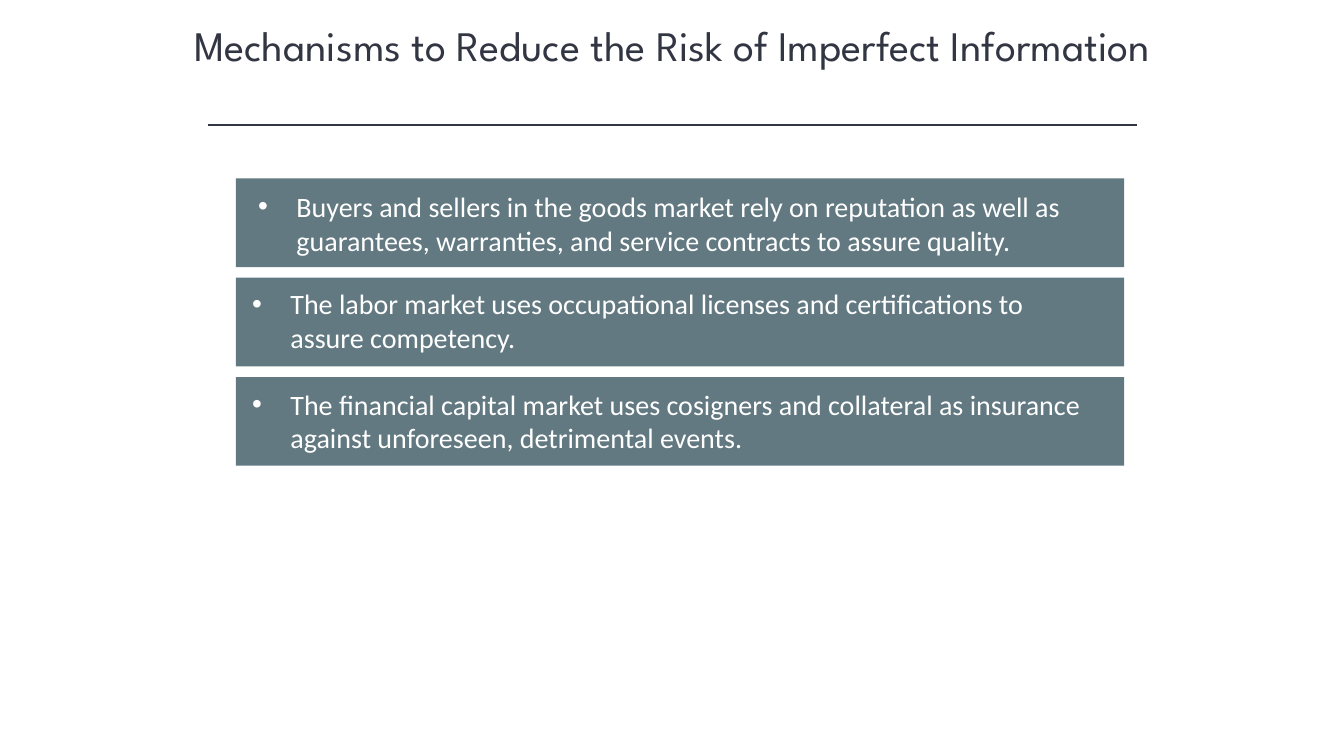
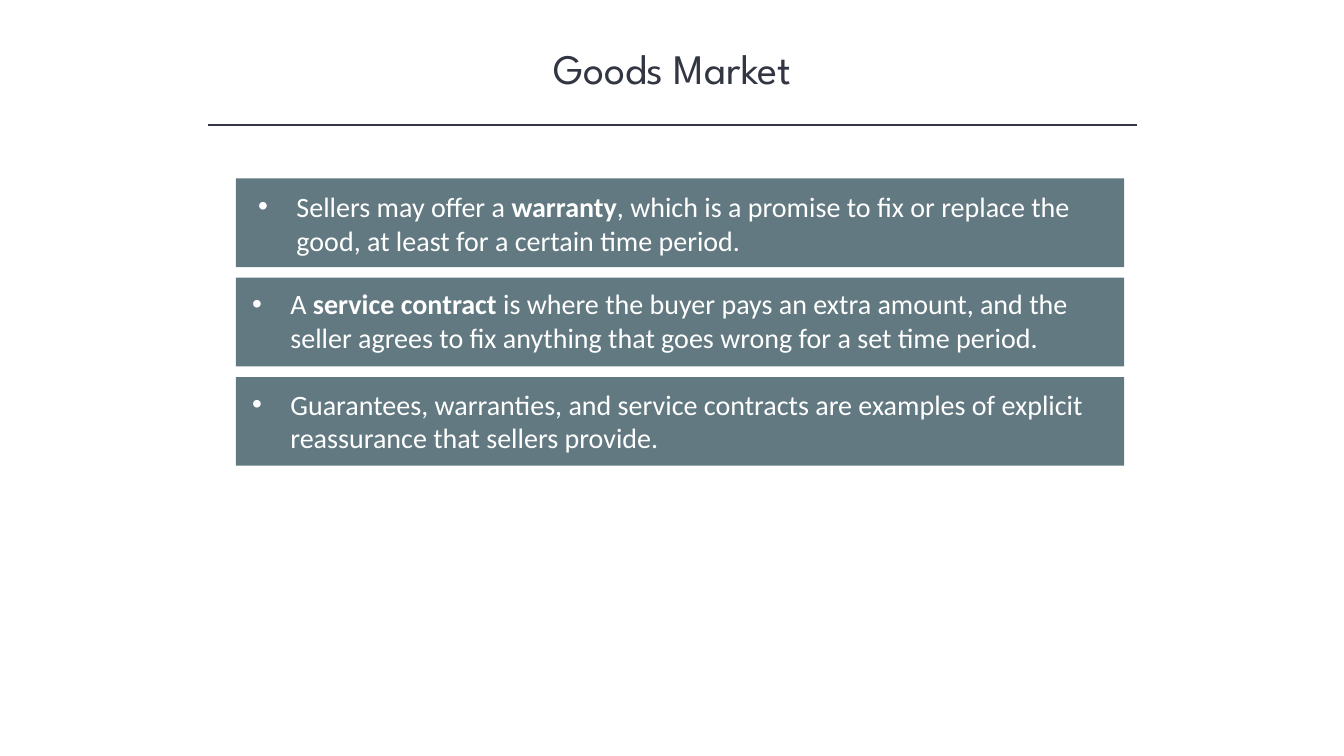
import collections

import pptx
import pptx.dml.color
import pptx.enum.shapes
import pptx.enum.text
import pptx.oxml
import pptx.util
from lxml import etree

Inches, Pt = pptx.util.Inches, pptx.util.Pt
RGBColor = pptx.dml.color.RGBColor
Box = collections.namedtuple("Box", "left top width height")

# Shared look
INK = RGBColor(0x32, 0x35, 0x42)
SLATE = RGBColor(0x62, 0x79, 0x81)
WHITE = RGBColor(0xFF, 0xFF, 0xFF)
PAGE = Box(0, 0, 13.33, 7.5)
TITLE_FONT = {"name": "League Spartan", "size": Pt(30)}
BODY_FONT = {"name": "Calibri", "size": Pt(20)}
TITLE_FRAME = {"word_wrap": True, "auto_size": pptx.enum.text.MSO_AUTO_SIZE.NONE,
               "vertical_anchor": pptx.enum.text.MSO_ANCHOR.TOP}
BAND_FRAME = {**TITLE_FRAME, "margin_bottom": 0}

# Shared grid
RULE = Box(2.06, 1.24, 9.22, 0)
BANDS = Box(2.34, 1.77, 8.81, 2.85)
BAND_HEIGHT = 0.88
TEXT_WIDTH = 8.34
TEXT_INSETS = [(0.22, 0.11), (0.16, 0.09), (0.16, 0.1)]  # left, top in each band
BULLET_INDENT = 0.38

# Content: title, title box, bands of (text, bold) runs
SLIDES = [
    ("Mechanisms to Reduce the Risk of Imperfect Information", Box(1.67, 0.14, 10, 1.11), [
        [("Buyers and sellers in the goods market rely on reputation as well as "
          "guarantees, warranties, and service contracts to assure quality.", False)],
        [("The labor market uses occupational licenses and certifications to "
          "assure competency.", False)],
        [("The financial capital market uses cosigners and collateral as insurance "
          "against unforeseen, detrimental events.", False)],
    ]),
    ("Goods Market", Box(1.67, 0.37, 10, 0.61), [
        [("Sellers may offer a ", False), ("warranty", True),
         (", which is a promise to fix or replace the good, at least for a certain "
          "time period.", False)],
        [("A ", False), ("service contract ", True),
         ("is where the buyer pays an extra amount, and the seller agrees to fix "
          "anything that goes wrong for a set time period.", False)],
        [("Guarantees, warranties, and service contracts are examples of explicit "
          "reassurance that sellers provide.", False)],
    ]),
]


def apply(target, values):
    for name, value in values.items():
        setattr(target, name, value)


def emu(box):
    return [Inches(length) for length in box]


def add_run(paragraph, text, font, color, bold=False):
    run = paragraph.add_run()
    run.text = text
    apply(run.font, {**font, "bold": bold})
    run.font.color.rgb = color


def add_bullet(paragraph):
    properties = paragraph._p.get_or_add_pPr()
    properties.set("marL", str(Inches(BULLET_INDENT)))
    properties.set("indent", str(-Inches(BULLET_INDENT)))
    for tag, attribute, value in (("a:buFont", "typeface", "Arial"), ("a:buChar", "char", "•")):
        etree.SubElement(properties, pptx.oxml.ns.qn(tag)).set(attribute, value)


def add_title(slide, box, text):
    title = slide.shapes.title
    apply(title, dict(zip(Box._fields, emu(box))))
    apply(title.text_frame, TITLE_FRAME)
    paragraph = title.text_frame.paragraphs[0]
    paragraph.alignment = pptx.enum.text.PP_ALIGN.CENTER
    add_run(paragraph, text, TITLE_FONT, INK)


def add_rule(slide, box):
    left, top, width, height = emu(box)
    rule = slide.shapes.add_connector(pptx.enum.shapes.MSO_CONNECTOR.STRAIGHT,
                                      left, top, left + width, top + height)
    rule.line.color.rgb = INK
    rule.line.width = Pt(1)
    etree.SubElement(rule._element.spPr, pptx.oxml.ns.qn("a:effectLst"))


def add_band(slide, box, inset, runs):
    band = slide.shapes.add_shape(pptx.enum.shapes.MSO_SHAPE.RECTANGLE, *emu(box))
    band.shadow.inherit = False
    band.fill.solid()
    band.fill.fore_color.rgb = SLATE
    band.line.fill.background()
    inset_left, inset_top = inset
    apply(band.text_frame, {
        **BAND_FRAME, "margin_left": Inches(inset_left), "margin_top": Inches(inset_top),
        "margin_right": Inches(box.width - inset_left - TEXT_WIDTH)})
    paragraph = band.text_frame.paragraphs[0]
    paragraph.alignment = pptx.enum.text.PP_ALIGN.LEFT
    add_bullet(paragraph)
    for text, bold in runs:
        add_run(paragraph, text, BODY_FONT, WHITE, bold)


def add_bands(slide, box, bands):
    # Equal steps from the first band to the last
    step = (box.height - BAND_HEIGHT) / (len(bands) - 1)
    for row, (inset, runs) in enumerate(zip(TEXT_INSETS, bands)):
        band_box = Box(box.left, box.top + row * step, box.width, BAND_HEIGHT)
        add_band(slide, band_box, inset, runs)


def main():
    deck = pptx.Presentation()
    deck.slide_width, deck.slide_height = Inches(PAGE.width), Inches(PAGE.height)
    title_only = deck.slide_layouts.get_by_name("Title Only")
    for title, title_box, bands in SLIDES:
        slide = deck.slides.add_slide(title_only)
        add_title(slide, title_box, title)
        add_rule(slide, RULE)
        add_bands(slide, BANDS, bands)
    deck.save("out.pptx")


if __name__ == "__main__":
    main()
